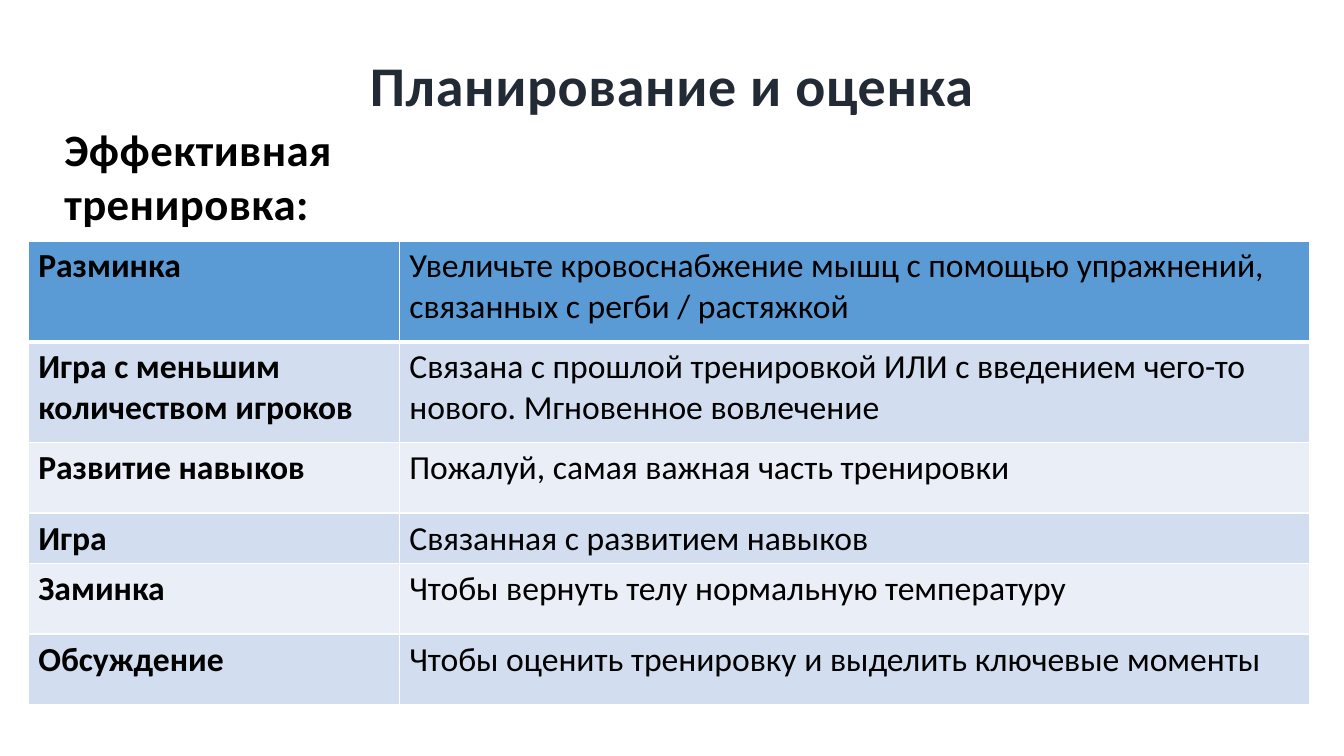
from lxml import etree
from pptx import Presentation
from pptx.dml.color import RGBColor
from pptx.enum import text
from pptx.oxml import ns
from pptx.util import Inches, Pt

FONT = "Calibri"
BLACK = RGBColor(0x00, 0x00, 0x00)
NAVY = RGBColor(0x22, 0x2A, 0x35)
HEADER_BLUE = RGBColor(0x5B, 0x9B, 0xD5)
BANDS = [RGBColor(0xEA, 0xEF, 0xF7), RGBColor(0xD2, 0xDE, 0xEF)]

# Session part, its purpose, row height
SESSION = [
    ("Разминка", "Увеличьте кровоснабжение мышц с помощью упражнений, "
     "связанных с регби / растяжкой", 1),
    ("Игра с меньшим количеством игроков", "Связана с прошлой тренировкой ИЛИ "
     "с введением чего-то нового. Мгновенное вовлечение", 1),
    ("Развитие навыков", "Пожалуй, самая важная часть тренировки", 0.7),
    ("Игра", "Связанная с развитием навыков", 0.5),
    ("Заминка", "Чтобы вернуть телу нормальную температуру", 0.7),
    ("Обсуждение", "Чтобы оценить тренировку и выделить ключевые моменты", 0.7),
]
COLUMN_WIDTHS = [3.68, 9.03]


def style(para, size, color, bold):
    font = para.font
    font.name, font.size, font.bold = FONT, Pt(size), bold
    font.color.rgb = color


def add_heading(page, box, words, size, color, spacing, align, anchor):
    """Add a bold text box; spacing is the letter spacing in points."""
    frame = page.shapes.add_textbox(*map(Inches, box)).text_frame
    frame.word_wrap = True
    frame.vertical_anchor = anchor
    para = frame.paragraphs[0]
    para.alignment = align
    span = para.add_run()
    span.text = words
    span._r.get_or_add_rPr().set("spc", str(round(spacing * 100)))
    style(para, size, color, True)


def add_borders(cell, bottom):
    """Draw white borders, 1 pt except for the given bottom width."""
    properties = cell._tc.get_or_add_tcPr()
    for side, width in (("L", 1), ("R", 1), ("T", 1), ("B", bottom)):
        line = etree.SubElement(properties, ns.qn("a:ln" + side), w=str(Pt(width)))
        fill = etree.SubElement(line, ns.qn("a:solidFill"))
        etree.SubElement(fill, ns.qn("a:srgbClr"), val="FFFFFF")


def add_session_table(page, left, top):
    width = sum(COLUMN_WIDTHS)
    height = sum(row[2] for row in SESSION)
    table = page.shapes.add_table(
        len(SESSION), len(COLUMN_WIDTHS),
        Inches(left), Inches(top), Inches(width), Inches(height)).table
    for column, column_width in zip(table.columns, COLUMN_WIDTHS):
        column.width = Inches(column_width)
    for index, (part, purpose, row_height) in enumerate(SESSION):
        row = table.rows[index]
        row.height = Inches(row_height)
        for cell, words in zip(row.cells, (part, purpose)):
            add_borders(cell, 1 if index else 3)
            cell.fill.solid()
            cell.fill.fore_color.rgb = BANDS[index % 2] if index else HEADER_BLUE
            cell.text = words
            style(cell.text_frame.paragraphs[0], 24, BLACK, words == part)


def main():
    deck = Presentation()
    deck.slide_width, deck.slide_height = Inches(13.33), Inches(7.5)
    page = deck.slides.add_slide(deck.slide_layouts[6])
    add_heading(page, (0, 0.42, 13.33, 0.8), "Планирование и оценка", 40, NAVY,
                0.5, text.PP_ALIGN.CENTER, text.MSO_ANCHOR.BOTTOM)
    add_heading(page, (0.54, 1.16, 4.12, 0.64), "Эффективная тренировка:", 32, BLACK,
                0.3, text.PP_ALIGN.LEFT, text.MSO_ANCHOR.TOP)
    add_session_table(page, 0.28, 2.39)
    deck.save("out.pptx")


if __name__ == "__main__":
    main()
